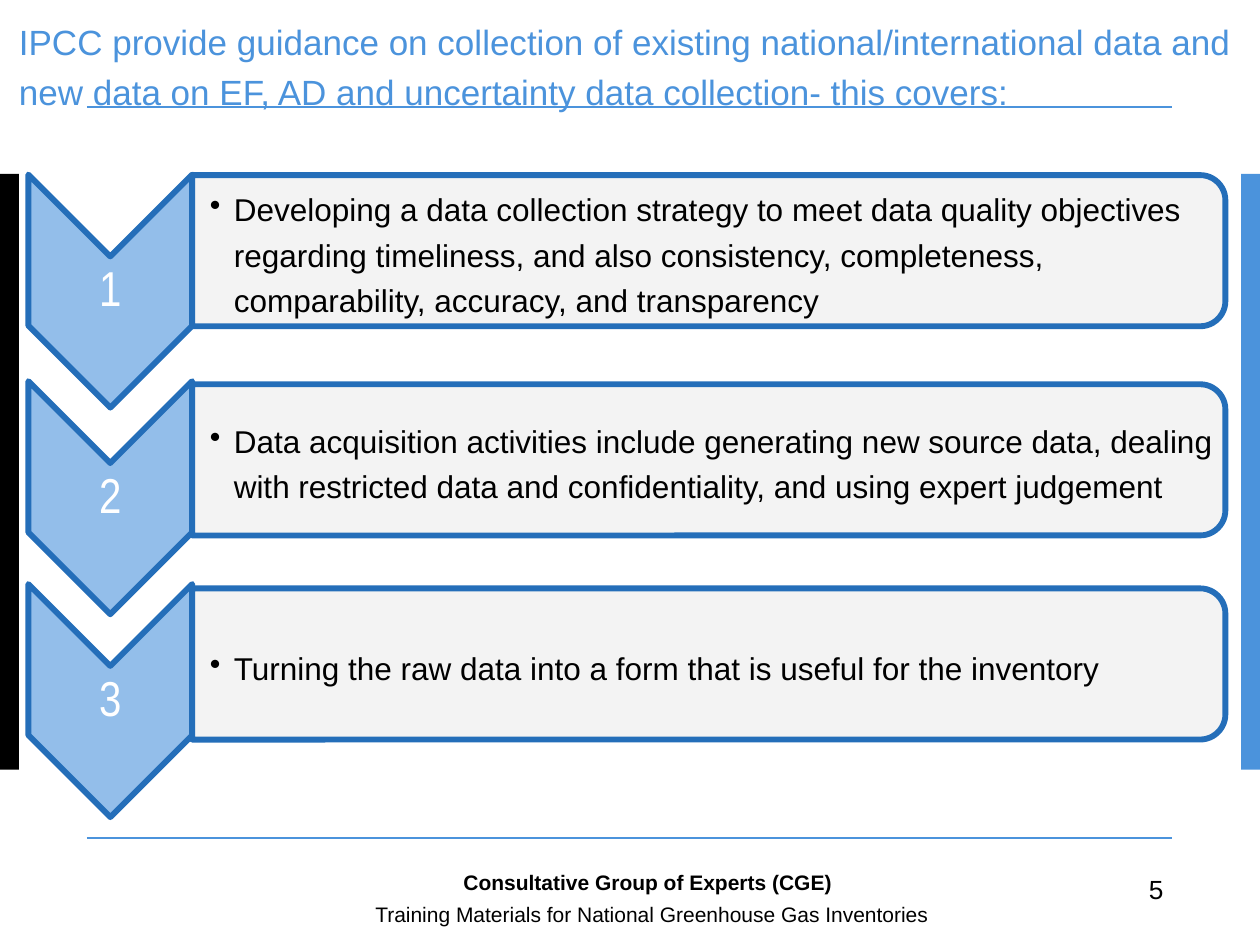
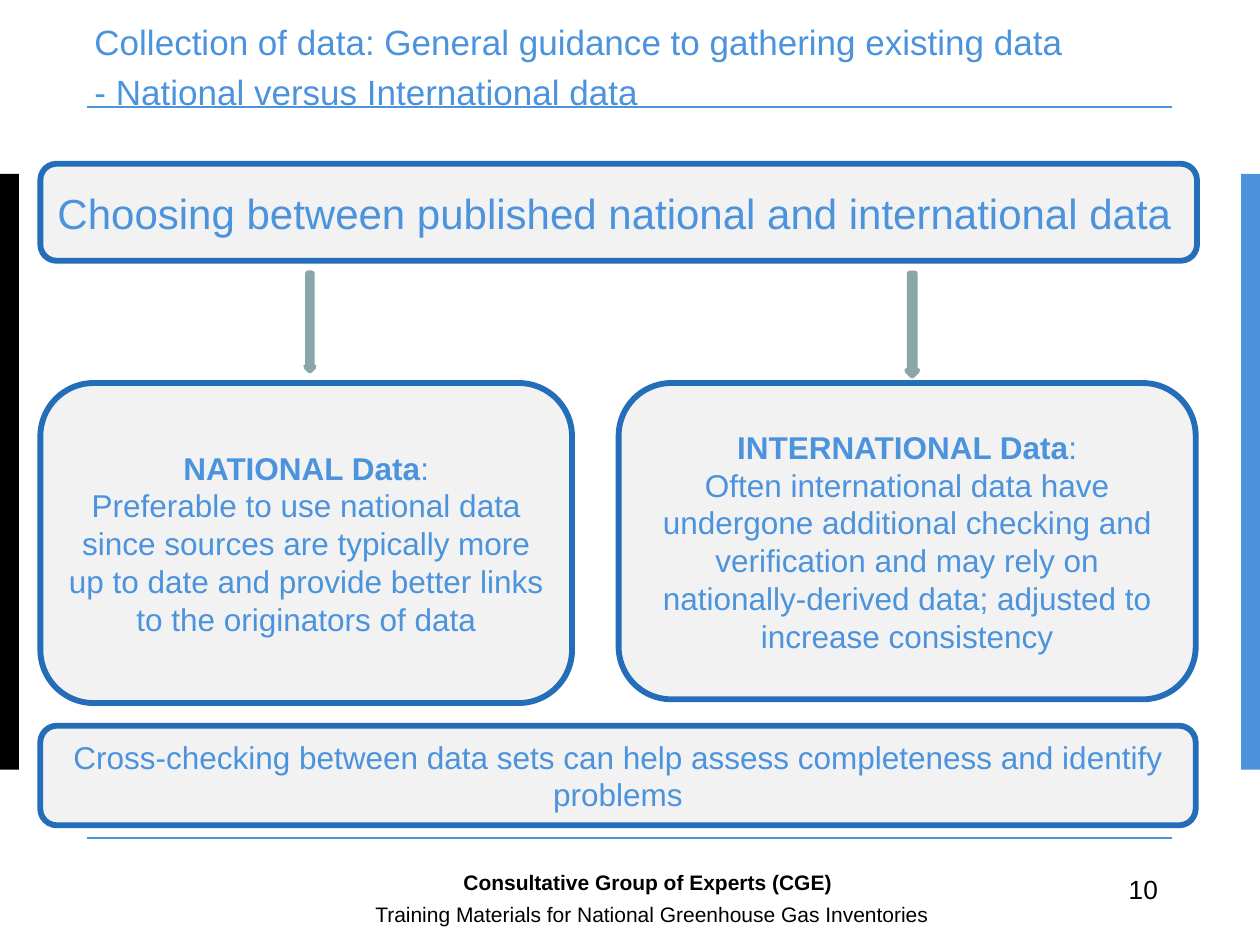
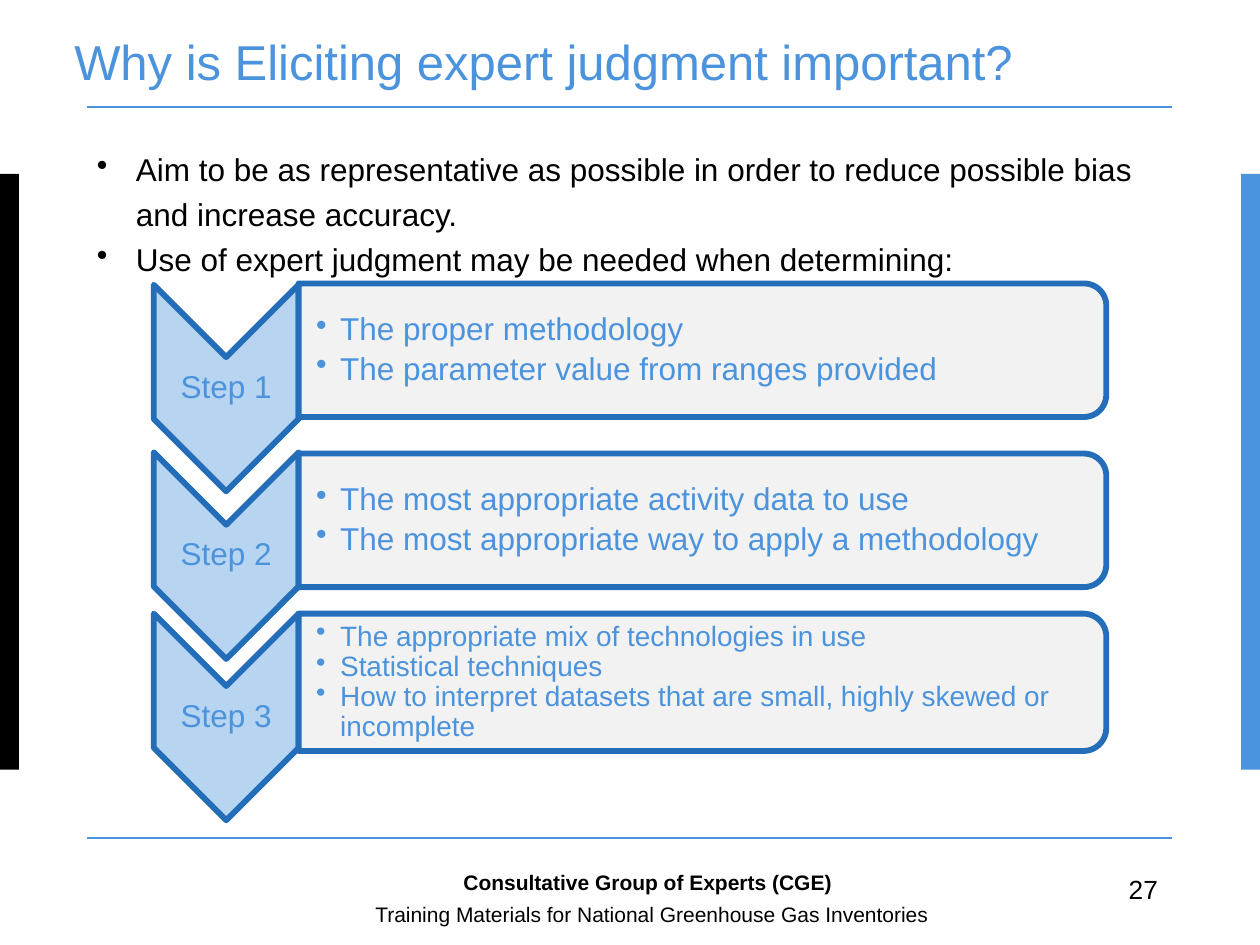
from lxml import etree
from pptx import Presentation
from pptx import util as u
from pptx.dml.color import RGBColor
from pptx.enum import shapes, text
from pptx.oxml.ns import qn

COLORS = {
    "black": "000000", "white": "FFFFFF", "blue": "4B93DC", "edge": "246EB9",
    "panel": "F2F2F2", "chevron": "93BEEA", "pale": "B7D4F1",
    "arrow": "BBE0E3", "arrow_edge": "8AA6A8",
}
COLS, ROWS = 100, 75
SHAPE = shapes.MSO_SHAPE
CENTER = text.PP_ALIGN.CENTER
MIDDLE = text.MSO_ANCHOR.MIDDLE
BORDER = 3.35
INSETS = (1, 0.5, 1, 0.5)

prs = Presentation()
prs.slide_width, prs.slide_height = u.Inches(10), u.Inches(7.5)
COL, ROW = prs.slide_width / COLS, prs.slide_height / ROWS


def rgb(name):
    """Return the palette colour of that name."""
    return RGBColor.from_string(COLORS[name])


def place(box):
    """Turn a box in grid columns and rows into slide lengths."""
    x, y, w, h = box
    return int(x * COL), int(y * ROW), int(w * COL), int(h * ROW)


def write(sp, paragraphs, size=18, color="blue", font="Arial", bold=False, align=None,
          anchor=MIDDLE, spacing=None, after=None, indent=None, insets=INSETS, wrap=True):
    """Fill a shape with paragraphs, each a string or a list of (text, bold) runs."""
    tf = sp.text_frame
    tf.word_wrap, tf.vertical_anchor = wrap, anchor
    tf.margin_left, tf.margin_top, tf.margin_right, tf.margin_bottom = place(insets)
    for i, content in enumerate(paragraphs):
        p = tf.paragraphs[0] if i == 0 else tf.add_paragraph()
        p.alignment = align or text.PP_ALIGN.LEFT
        if spacing:
            p.line_spacing = spacing
        if after:
            p.space_after = u.Pt(after)
        if indent:
            pPr = p._p.get_or_add_pPr()
            pPr.set("marL", str(int(indent * COL)))
            pPr.set("indent", str(-int(indent * COL)))
            etree.SubElement(pPr, qn("a:buChar")).set("char", "•")
        runs = [(content, bold)] if isinstance(content, str) else content
        for words, strong in runs:
            r = p.add_run()
            r.text = words
            r.font.name, r.font.size, r.font.bold = font, u.Pt(size), strong
            r.font.color.rgb = rgb(color)


def add_text(s, box, paragraphs, **style):
    """Add a text box."""
    write(s.shapes.add_textbox(*place(box)), paragraphs, **style)


def add_shape(s, kind, box, fill, line=None, turned=False, alpha=None):
    """Add a preset shape; a turned one is rotated to fill its box sideways."""
    if turned:
        x, y, w, h = box
        box = (x + (w - h) / 2, y + (h - w) / 2, h, w)
    sp = s.shapes.add_shape(kind, *place(box))
    sp.shadow.inherit = False
    sp.rotation = 90 if turned else 0
    sp.fill.solid()
    sp.fill.fore_color.rgb = rgb(fill)
    if alpha:
        clr = sp._element.spPr.find(qn("a:solidFill"))[0]
        etree.SubElement(clr, qn("a:alpha")).set("val", str(alpha * 1000))
    if line:
        sp.line.color.rgb = rgb(line)
        sp.line.width = u.Pt(BORDER)
    else:
        sp.line.fill.background()
    return sp


def add_rule(s, y):
    """Draw a thin rule across the slide."""
    x1, top, x2, _ = place((6.9, y, 93, 0))
    line = s.shapes.add_connector(shapes.MSO_CONNECTOR.STRAIGHT, x1, top, x2, top)
    line.line.color.rgb, line.line.width = rgb("blue"), u.Pt(1)
    etree.SubElement(line._element.spPr, qn("a:effectLst"))


def add_frame(title, title_box, number, number_x, size=20, spacing=1.2):
    """Start a slide with its side bands, rules, title and footer."""
    s = prs.slides.add_slide(prs.slide_layouts[6])
    for x, color in ((0, "black"), (98.5, "blue")):
        add_shape(s, SHAPE.RECTANGLE, (x, 13.8, 1.5, 47.3), color)
    for y in (8.5, 66.5):
        add_rule(s, y)
    add_text(s, title_box, title, size=size, spacing=spacing, insets=(0, 0, 0, 0))
    footer = dict(color="black", anchor=text.MSO_ANCHOR.TOP, wrap=False)
    add_text(s, (number_x, 68.8, 93.3 - number_x, 3.5), [number], size=15, **footer)
    add_text(s, (28.8, 71.1, 57.2, 2), ["Training Materials for National Greenhouse Gas Inventories"],
             size=12, **footer)
    add_text(s, (35.8, 68.5, 33.9, 2.7), ["Consultative Group of Experts (CGE)"],
             size=12, bold=True, **footer)
    return s


def add_step(s, box, bar_top, bar_height, chevron_width, label, lines, fill, label_style, line_style,
             alpha=None):
    """Draw a downward chevron with its label and the bar of text beside it."""
    x, y, w, h = box
    chevron = (x, y, chevron_width, h)
    bar = (x + chevron_width, bar_top, w - chevron_width, bar_height)
    add_shape(s, SHAPE.CHEVRON, chevron, fill, "edge", turned=True)
    add_text(s, chevron, [label], align=CENTER, spacing=0.9, insets=(0.1, 0.1, 0.1, 0.1), **label_style)
    add_shape(s, SHAPE.ROUND_2_SAME_RECTANGLE, bar, "panel", "edge", turned=True, alpha=alpha)
    add_text(s, (bar[0], bar_top, bar[2] - 0.5, bar_height), lines, indent=1.9,
             insets=(1.4, 0.1, 0.1, 0.1), **line_style)


def add_panel(s, box, paragraphs, **style):
    """Draw a rounded panel with text."""
    write(add_shape(s, SHAPE.ROUNDED_RECTANGLE, box, "panel", "edge"), paragraphs, **style)


def guidance_slide():
    """Build the slide on what the guidance covers."""
    s = add_frame(["IPCC provide guidance on collection of existing national/international data and "
                   "new data on EF, AD and uncertainty data collection- this covers:"],
                  (1.5, -0.8, 98.5, 11.5), "5", 90.2)
    steps = [
        (13.85, 13.9, "Developing a data collection strategy to meet data quality objectives regarding "
         "timeliness, and also consistency, completeness, comparability, accuracy, and transparency"),
        (30.25, 30.5, "Data acquisition activities include generating new source data, dealing with "
         "restricted data and confidentiality, and using expert judgement"),
        (46.35, 46.7, "Turning the raw data into a form that is useful for the inventory"),
    ]
    for i, (top, bar_top, line) in enumerate(steps, 1):
        add_step(s, (2.25, top, 95, 18.5), bar_top, 12, 13, str(i), [line], "chevron",
                 dict(size=28, font="Arial Narrow", color="white"),
                 dict(color="black", spacing=1.2), alpha=90)


def comparison_slide():
    """Build the slide that sets national against international data."""
    s = add_frame(["Collection of data: General guidance to gathering existing data",
                   "- National versus International data"], (7.5, -0.3, 91.3, 10.5), "10", 88.6)
    add_panel(s, (3.2, 13, 91.8, 7.7), ["Choosing between published national and international data"],
              size=24)
    sides = [
        ((3.2, 30.4, 42.2, 25.4), (24.3, 21.7, 0.6, 7.7), "NATIONAL Data",
         "Preferable to use national data since sources are typically more up to date and provide "
         "better links to the originators of data"),
        ((49.1, 30.4, 45.8, 25.1), (72, 21.7, 0.8, 8.1), "INTERNATIONAL Data",
         "Often international data have undergone additional checking and verification and may rely "
         "on nationally-derived data; adjusted to increase consistency"),
    ]
    for box, arrow, heading, body in sides:
        add_panel(s, box, [[(heading, True), (":", False)], body], align=CENTER)
        add_shape(s, SHAPE.DOWN_ARROW, arrow, "arrow", "arrow_edge")
    add_panel(s, (3.2, 57.6, 91.7, 7.9),
              ["Cross-checking between data sets can help assess completeness and identify problems"],
              align=CENTER)


def judgment_slide():
    """Build the slide on when expert judgment is needed."""
    s = add_frame(["Why is Eliciting expert judgment important?"], (5.9, 0, 84.3, 10.6), "27", 88.6,
                  size=28, spacing=0.8)
    add_text(s, (6.7, 10.8, 87.4, 11.6),
             ["Aim to be as representative as possible in order to reduce possible bias and increase "
              "accuracy.", "Use of expert judgment may be needed when determining:"],
             color="black", spacing=1.2, indent=3.1, anchor=text.MSO_ANCHOR.TOP)
    steps = [
        (22.6, 22.5, 10.6, dict(after=3),
         ["The proper methodology", "The parameter value from ranges provided"]),
        (35.9, 36, 10.6, dict(after=3),
         ["The most appropriate activity data to use", "The most appropriate way to apply a methodology"]),
        (48.7, 48.7, 10.9, dict(size=16),
         ["The appropriate mix of technologies in use", "Statistical techniques",
          "How to interpret datasets that are small, highly skewed or incomplete"]),
    ]
    for i, (top, bar_top, bar_height, style, lines) in enumerate(steps, 1):
        add_step(s, (12.2, top, 75.6, 16.4), bar_top, bar_height, 11.5, f"Step {i}", lines, "pale",
                 {}, dict(spacing=0.9, **style))


def main():
    """Build the three slides and save them."""
    guidance_slide()
    comparison_slide()
    judgment_slide()
    prs.save("out.pptx")


if __name__ == "__main__":
    main()
